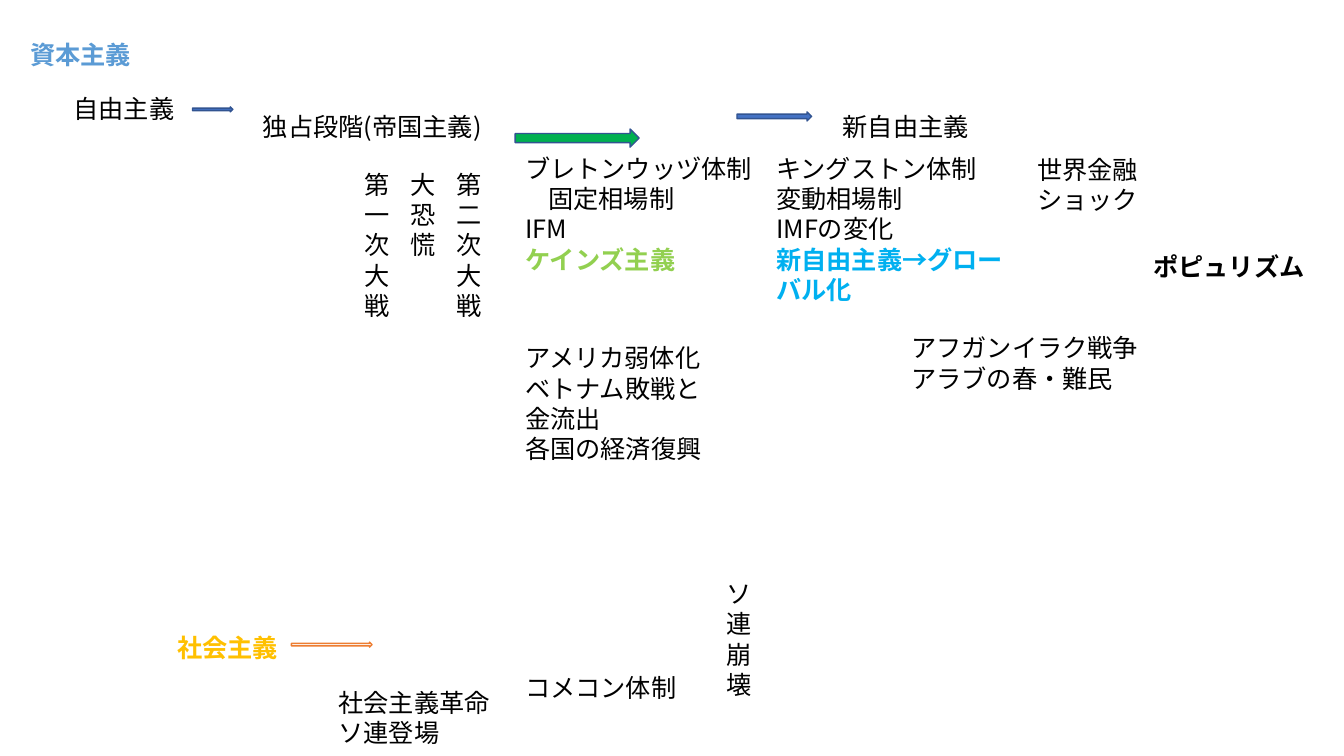
"""Build a one-page timeline of capitalism and socialism."""
import pptx
import pptx.dml.color
import pptx.enum.lang
import pptx.enum.shapes
import pptx.enum.text
import pptx.util
import lxml.etree

COLORS = {
    "black": "000000", "white": "FFFFFF", "capitalism": "5B9BD5", "socialism": "FFC000",
    "keynes": "92D050", "neoliberal": "00B0F0", "blue": "4472C4", "navy": "325491",
    "green": "00B050", "orange": "ED7D31",
}
FONT = "Noto Sans CJK JP"
CELL = pptx.util.Inches(0.1)
PADDING_ROWS, LINE_ROWS = 1, 3.03
POSTWAR, KINGSTON = 51.1, 76
WARS_LEFT, WARS_TOP, WARS_STEP = 35.2, 16.3, 4.55


def cells(*counts):
    return [pptx.util.Emu(round(count * CELL)) for count in counts]


def color(name):
    return pptx.dml.color.RGBColor.from_string(COLORS[name])


deck = pptx.Presentation()
deck.slide_width, deck.slide_height = cells(133.3, 75)
page = deck.slides.add_slide(deck.slide_layouts[6])

# left, top, width, line count, paragraphs of (text, color, bold, indent)
PLAIN = ("black", False, 0)
labels = [
    (2, 3.4, 12.6, 1, [("資本主義", "capitalism", True, 0)]),
    (6.3, 8.8, 14.3, 1, [("自由主義", *PLAIN)]),
    (25.1, 10.6, 24.9, 1, [("独占段階(帝国主義)", *PLAIN)]),
    (16.6, 62.2, 16, 1, [("社会主義", "socialism", True, 0)]),
    (32.6, 67.7, 17.4, 2, [("社会主義革命ソ連登場", *PLAIN)]),
    (POSTWAR, 14.7, 24.9, 4, [
        ("ブレトンウッヅ体制", *PLAIN),
        ("固定相場制", "black", False, 2.3),
        ("IFM", *PLAIN),
        ("ケインズ主義", "keynes", True, 0),
    ]),
    (POSTWAR, 66.2, 17.4, 1, [("コメコン体制", *PLAIN)]),
    (POSTWAR, 33.5, 20, 4, [
        ("アメリカ弱体化", *PLAIN),
        ("ベトナム敗戦と金流出", *PLAIN),
        ("各国の経済復興", *PLAIN),
    ]),
    (71.1, 56.9, 4.9, 4, [("ソ連崩壊", *PLAIN)]),
    (KINGSTON, 14.7, 25.1, 5, [
        ("キングストン体制", *PLAIN),
        ("変動相場制", *PLAIN),
        ("IMFの変化", *PLAIN),
        ("新自由主義→グローバル化", "neoliberal", True, 0),
    ]),
    (82.6, 10.6, 15.7, 1, [("新自由主義", *PLAIN)]),
    (101.9, 14.8, 16.2, 2, [("世界金融ショック", *PLAIN)]),
    (89.4, 32.5, 25.1, 2, [("アフガンイラク戦争アラブの春・難民", *PLAIN)]),
    (113.4, 24.4, 17.2, 1, [("ポピュリズム", "black", True, 0)]),
]
for column, crisis in enumerate(["第一次大戦", "大恐慌", "第二次大戦"]):
    left = WARS_LEFT + column * WARS_STEP
    labels.append((left, WARS_TOP, WARS_STEP, len(crisis), [(crisis, *PLAIN)]))

for left, top, width, lines, paragraphs in labels:
    height = PADDING_ROWS + lines * LINE_ROWS
    box = page.shapes.add_textbox(*cells(left, top, width, height))
    frame = box.text_frame
    frame.word_wrap = True
    frame.auto_size = pptx.enum.text.MSO_AUTO_SIZE.SHAPE_TO_FIT_TEXT
    for index, (text, ink, bold, indent) in enumerate(paragraphs):
        para = frame.add_paragraph() if index else frame.paragraphs[0]
        if indent:
            para._p.get_or_add_pPr().set("marL", str(round(indent * CELL)))
        span = para.add_run()
        span.text = text
        span.font.name = FONT
        span.font.size = pptx.util.Pt(18)
        span.font.bold = bold
        span.font.color.rgb = color(ink)
        span.font.language_id = pptx.enum.lang.MSO_LANGUAGE_ID.JAPANESE
        east_asian = lxml.etree.SubElement(span._r.get_or_add_rPr(), pptx.oxml.ns.qn("a:ea"))
        east_asian.set("typeface", FONT)

arrows = [
    (19.1, 10.6, 4, 0.5, "blue", "navy"),
    (28.9, 63.7, 8, 0.5, "white", "orange"),
    (POSTWAR, 12.8, 12.3, 1.8, "green", "navy"),
    (73.1, 11.1, 7.4, 0.9, "blue", "navy"),
]
for left, top, width, height, fill, outline in arrows:
    arrow = page.shapes.add_shape(
        pptx.enum.shapes.MSO_SHAPE.RIGHT_ARROW, *cells(left, top, width, height))
    arrow.shadow.inherit = False
    arrow.fill.solid()
    arrow.fill.fore_color.rgb = color(fill)
    arrow.line.color.rgb = color(outline)
    arrow.line.width = pptx.util.Pt(1)

deck.save("out.pptx")
